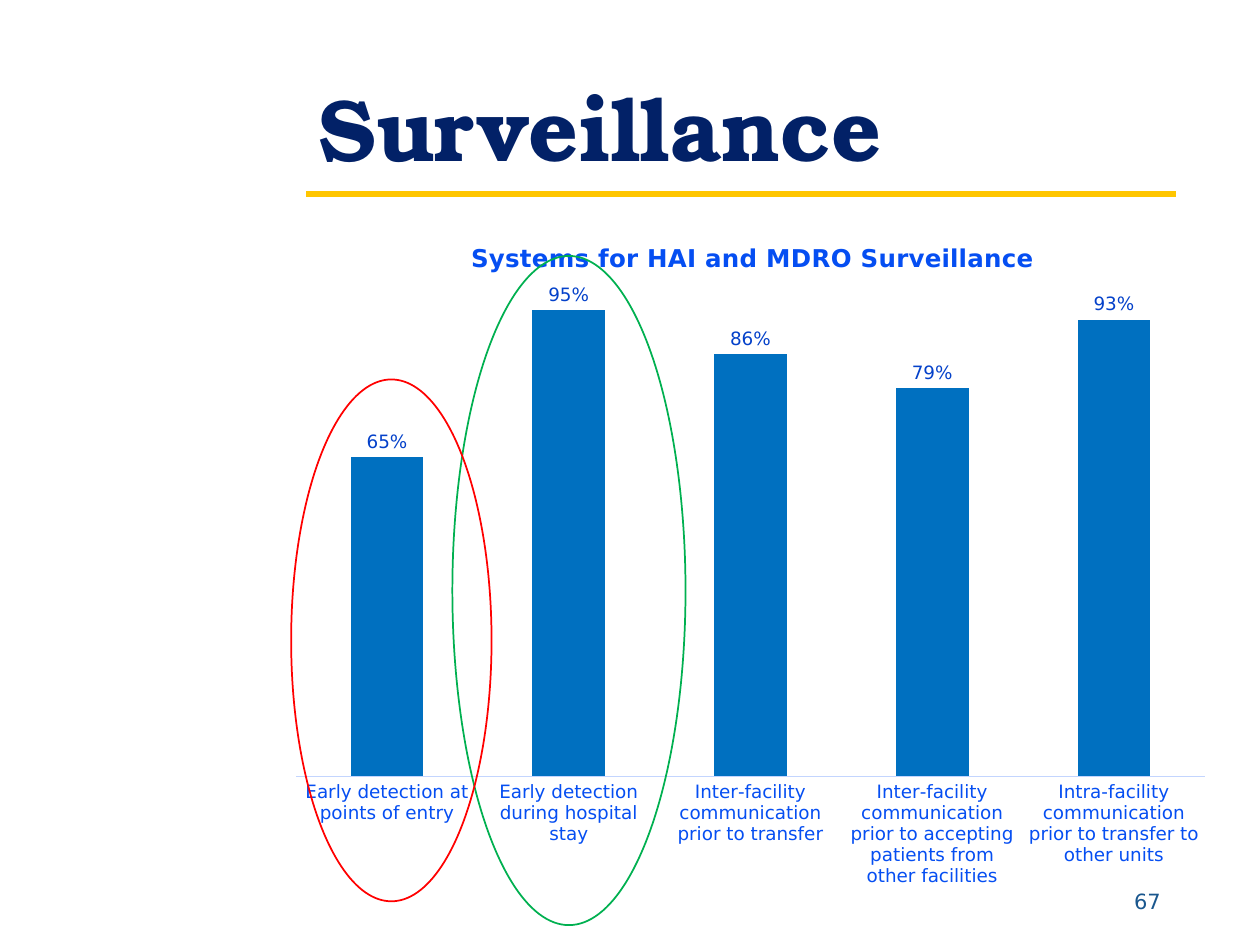
from dataclasses import dataclass

from lxml.etree import SubElement
from pptx import Presentation
from pptx.chart.data import CategoryChartData
from pptx.dml.color import RGBColor
from pptx.enum.chart import XL_CHART_TYPE as ChartType
from pptx.enum.chart import XL_LABEL_POSITION as LabelPosition
from pptx.enum.chart import XL_TICK_LABEL_POSITION as TickLabels
from pptx.enum.chart import XL_TICK_MARK as TickMark
from pptx.enum.shapes import MSO_CONNECTOR as Connector
from pptx.enum.shapes import MSO_SHAPE as Preset
from pptx.enum.text import MSO_ANCHOR as Anchor
from pptx.enum.text import PP_ALIGN as Align
from pptx.oxml import parse_xml
from pptx.oxml.ns import nsdecls, qn
from pptx.util import Cm, Pt

BODY_FONT = "DejaVu Sans"
TITLE_FONT = "TeX Gyre Bonum"
NAVY = "022167"
BLUE = "054EF2"

SYSTEMS = {
    "Early detection at points of entry": 0.65,
    "Early detection during hospital stay": 0.95,
    "Inter-facility communication prior to transfer": 0.86,
    "Inter-facility communication prior to accepting patients from other facilities": 0.79,
    "Intra-facility communication prior to transfer to other units": 0.93,
}


@dataclass(frozen=True)
class Frame:
    left: float
    top: float
    width: float
    height: float

    def lengths(self) -> tuple:
        return Cm(self.left), Cm(self.top), Cm(self.width), Cm(self.height)


@dataclass(frozen=True)
class Label:
    text: str
    frame: Frame
    font: str
    size: float
    color: str
    bold: bool
    align: Align
    anchor: Anchor
    line_spacing: float


@dataclass(frozen=True)
class Highlight:
    frame: Frame
    color: str


LABELS = [
    Label("Surveillance", Frame(6.17, 1.7, 17.48, 2.06), TITLE_FONT, 50, NAVY,
          True, Align.LEFT, Anchor.BOTTOM, 0.9),
    Label("67", Frame(19.38, 17.65, 4.27, 1.02), BODY_FONT, 12, "1A578E",
          False, Align.RIGHT, Anchor.MIDDLE, 1.0),
]
HIGHLIGHTS = [
    Highlight(Frame(9.12, 5.16, 4.7, 13.49), "00B050"),
    Highlight(Frame(5.87, 7.65, 4.04, 10.52), "FF0000"),
]


def rgb(value: str) -> RGBColor:
    return RGBColor.from_string(value)


def style_font(font, name: str, size: float, color: str, bold: bool = False) -> None:
    font.name = name
    font.size = Pt(size)
    font.bold = bold
    font.color.rgb = rgb(color)


def add_label(page, label: Label) -> None:
    box = page.shapes.add_textbox(*label.frame.lengths())
    box.text_frame.word_wrap = True
    box.text_frame.vertical_anchor = label.anchor
    para = box.text_frame.paragraphs[0]
    para.alignment = label.align
    para.line_spacing = label.line_spacing
    span = para.add_run()
    span.text = label.text
    style_font(span.font, label.font, label.size, label.color, label.bold)


def add_rule(page) -> None:
    rule = page.shapes.add_connector(
        Connector.STRAIGHT, Cm(6.17), Cm(3.91), Cm(23.7), Cm(3.91))
    rule.line.color.rgb = rgb("FFC600")
    rule.line.width = Pt(3)
    SubElement(rule._element.spPr, qn("a:effectLst"))


def add_highlight(page, highlight: Highlight) -> None:
    ring = page.shapes.add_shape(Preset.OVAL, *highlight.frame.lengths())
    ring.shadow.inherit = False
    ring.fill.background()
    ring.line.color.rgb = rgb(highlight.color)
    ring.line.width = Pt(1)


def place(element, **values) -> None:
    for old in element.findall(qn("c:layout")):
        element.remove(old)
    entries = "".join(f'<c:{key} val="{value}"/>' for key, value in values.items())
    layout = parse_xml(f'<c:layout {nsdecls("c")}><c:manualLayout>{entries}'
                       "</c:manualLayout></c:layout>")
    text = element.find(qn("c:tx"))
    element.insert(0 if text is None else 1, layout)


def add_surveillance_chart(page) -> None:
    data = CategoryChartData(number_format="0%")
    data.categories = list(SYSTEMS)
    data.add_series("Series 1", list(SYSTEMS.values()))
    chart = page.shapes.add_chart(
        ChartType.COLUMN_CLUSTERED, *Frame(5.59, 4.22, 19.08, 13.94).lengths(), data).chart
    style_font(chart.font, BODY_FONT, 10, NAVY)
    chart.has_legend = False

    chart.has_title = True
    span = chart.chart_title.text_frame.paragraphs[0].add_run()
    span.text = "Systems for HAI and MDRO Surveillance"
    style_font(span.font, BODY_FONT, 14, BLUE, True)
    chart.chart_title.include_in_layout = False
    place(chart.chart_title._element, xMode="edge", yMode="edge", x=0.2, y=0.04)
    place(chart._chartSpace.chart.plotArea, layoutTarget="inner", xMode="edge",
          yMode="edge", x=0.02, y=0.11, w=0.96, h=0.71)

    categories = chart.category_axis
    categories.major_tick_mark = TickMark.NONE
    categories.format.line.color.rgb = rgb("C3D5FE")
    categories.format.line.width = Pt(0.75)
    style_font(categories.tick_labels.font, BODY_FONT, 10.5, BLUE)

    values = chart.value_axis
    values.minimum_scale = 0
    values.maximum_scale = 1
    values.has_major_gridlines = False
    values.tick_label_position = TickLabels.NONE
    values.visible = False

    plot = chart.plots[0]
    plot.gap_width = 150
    plot.overlap = -25
    plot.vary_by_categories = False
    bars = plot.series[0]
    bars.format.fill.solid()
    bars.format.fill.fore_color.rgb = rgb("0070C0")
    labels = bars.data_labels
    labels.show_value = True
    labels.number_format = "0%"
    labels.number_format_is_linked = False
    labels.position = LabelPosition.OUTSIDE_END
    style_font(labels.font, BODY_FONT, 10.5, "0441CA")


def main() -> None:
    deck = Presentation()
    deck.slide_width = Cm(25.4)
    deck.slide_height = Cm(19.05)
    page = deck.slides.add_slide(deck.slide_layouts[6])
    add_rule(page)
    for label in LABELS:
        add_label(page, label)
    add_surveillance_chart(page)
    for highlight in HIGHLIGHTS:
        add_highlight(page, highlight)
    deck.save("out.pptx")


if __name__ == "__main__":
    main()
